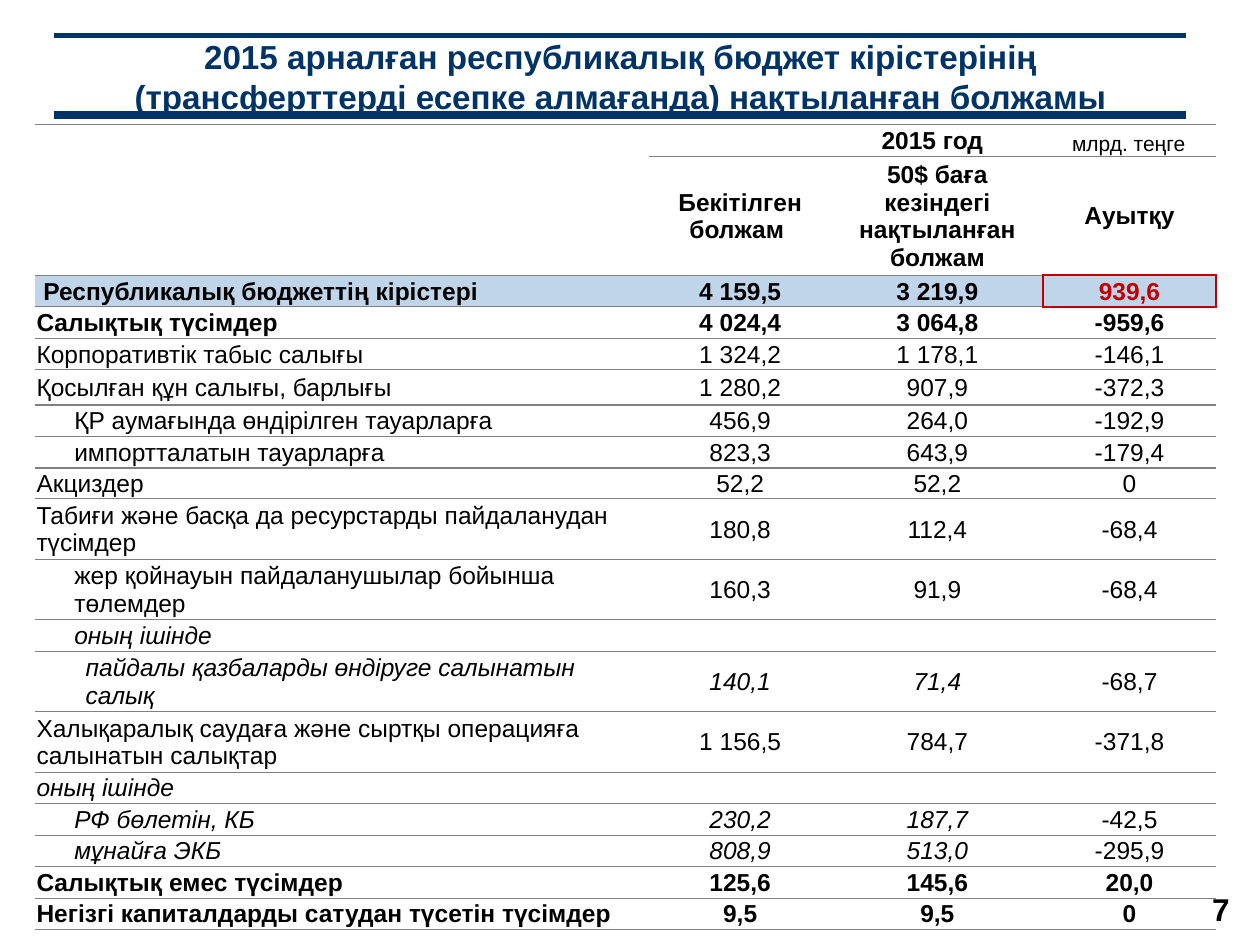
import pptx
import pptx.dml.color
import pptx.enum.shapes
import pptx.enum.text
import pptx.oxml.ns
import pptx.util
from lxml import etree

Inches = pptx.util.Inches
Pt = pptx.util.Pt
Align = pptx.enum.text.PP_ALIGN
Anchor = pptx.enum.text.MSO_ANCHOR
qn = pptx.oxml.ns.qn

NAVY, BLACK, WHITE = "003366", "000000", "FFFFFF"
BAND, RED, GREY = "C0D5EA", "C00000", "808080"
THIN, STRONG = (GREY, 0.75), (RED, 1.5)
NO_GRID = "{2D5ABB26-0587-4C30-8999-92F81FD0307C}"

COLUMNS = [4.87, 1.45, 1.68, 1.37]
SINGLE, DOUBLE = 0.25, 0.48
HEADER_HEIGHTS = [SINGLE, 0.94]
HEADERS = ["Бекітілген болжам ", "50$ баға кезіндегі нақтыланған болжам", "Ауытқу"]
ROWS = [
    (" Республикалық бюджеттің кірістері", "4 159,5", "3 219,9", "939,6", "bold", 0, SINGLE),
    ("Салықтық түсімдер", "4 024,4", "3 064,8", "-959,6", "bold", 0, SINGLE),
    ("Корпоративтік табыс салығы", "1 324,2", "1 178,1", "-146,1", "plain", 0, SINGLE),
    ("Қосылған құн салығы, барлығы", "1 280,2", "907,9", "-372,3", "plain", 0, 0.28),
    ("ҚР аумағында өндірілген тауарларға", "456,9", "264,0", "-192,9", "plain", 0.3, SINGLE),
    ("импортталатын тауарларға", "823,3", "643,9", "-179,4", "plain", 0.3, SINGLE),
    ("Акциздер", "52,2", "52,2", "0", "plain", 0, 0.24),
    ("Табиғи және басқа да ресурстарды пайдаланудан түсімдер",
     "180,8", "112,4", "-68,4", "plain", 0, DOUBLE),
    ("жер қойнауын пайдаланушылар бойынша төлемдер",
     "160,3", "91,9", "-68,4", "plain", 0.3, DOUBLE),
    ("оның ішінде", "", "", "", "italic", 0.3, SINGLE),
    ("пайдалы қазбаларды өндіруге салынатын салық",
     "140,1", "71,4", "-68,7", "italic", 0.39, DOUBLE),
    ("Халықаралық саудаға және сыртқы операцияға салынатын салықтар",
     "1 156,5", "784,7", "-371,8", "plain", 0, DOUBLE),
    ("оның ішінде", "", "", "", "italic", 0, SINGLE),
    ("РФ бөлетін, КБ", "230,2", "187,7", "-42,5", "italic", 0.3, SINGLE),
    ("мұнайға ЭКБ", "808,9", "513,0", "-295,9", "italic", 0.3, SINGLE),
    ("Салықтық емес түсімдер", "125,6", "145,6", "20,0", "bold", 0, SINGLE),
    ("Негізгі капиталдарды сатудан түсетін түсімдер", "9,5", "9,5", "0", "bold", 0, SINGLE),
]


def rgb(color):
    return pptx.dml.color.RGBColor.from_string(color)


class SlideBuilder:
    font = "Arial"
    table_size = 14

    def __init__(self, slide):
        self.slide = slide

    def span(self, para, text, size, color=BLACK, bold=False, italic=False, align=Align.LEFT):
        para.alignment = align
        span = para.add_run()
        span.text = text
        span.font.name = self.font
        span.font.size = Pt(size)
        span.font.bold = bold
        span.font.italic = italic
        span.font.color.rgb = rgb(color)

    def title(self, text, left, top, width, height):
        box = self.slide.shapes.title
        box.left, box.top = Inches(left), Inches(top)
        box.width, box.height = Inches(width), Inches(height)
        frame = box.text_frame
        frame.auto_size = pptx.enum.text.MSO_AUTO_SIZE.NONE
        frame.word_wrap = True
        frame.vertical_anchor = Anchor.MIDDLE
        self.span(frame.paragraphs[0], text, 19, NAVY, bold=True, align=Align.CENTER)

    def rule(self, left, right, y, weight):
        line = self.slide.shapes.add_connector(
            pptx.enum.shapes.MSO_CONNECTOR.STRAIGHT,
            Inches(right), Inches(y), Inches(left), Inches(y))
        line.line.color.rgb = rgb(NAVY)
        line.line.width = Pt(weight)
        etree.SubElement(line._element.spPr, qn("a:effectLst"))

    def page_number(self, text, left, top, width, height):
        box = self.slide.shapes.add_shape(
            pptx.enum.shapes.MSO_SHAPE.RECTANGLE,
            Inches(left), Inches(top), Inches(width), Inches(height))
        box.shadow.inherit = False
        box.fill.solid()
        box.fill.fore_color.rgb = rgb(WHITE)
        box.line.fill.background()
        box.text_frame.vertical_anchor = Anchor.MIDDLE
        self.span(box.text_frame.paragraphs[0], text, 18, bold=True, align=Align.CENTER)

    def label(self, text, left, top, width, height):
        box = self.slide.shapes.add_textbox(
            Inches(left), Inches(top), Inches(width), Inches(height))
        box.text_frame.word_wrap = False
        box.text_frame.auto_size = pptx.enum.text.MSO_AUTO_SIZE.SHAPE_TO_FIT_TEXT
        self.span(box.text_frame.paragraphs[0], text, 12)

    def table(self, left, top, columns, heights):
        frame = self.slide.shapes.add_table(
            len(heights), len(columns), Inches(left), Inches(top),
            Inches(sum(columns)), Inches(sum(heights)))
        table = frame.table
        table.first_row = table.horz_banding = False
        table._tbl.tblPr.find(qn("a:tableStyleId")).text = NO_GRID
        for column, width in zip(table.columns, columns):
            column.width = Inches(width)
        for row, height in zip(table.rows, heights):
            row.height = Inches(height)
        return table

    def cell(self, cell, text, align=Align.CENTER, indent=0, **style):
        cell.vertical_anchor = Anchor.MIDDLE
        cell.margin_left = cell.margin_right = cell.margin_top = Inches(0.01)
        cell.margin_bottom = 0
        para = cell.text_frame.paragraphs[0]
        if text:
            self.span(para, text, self.table_size, align=align, **style)
            if indent:
                properties = para._p.get_or_add_pPr()
                properties.set("marL", str(Inches(indent)))
                properties.set("indent", "0")
        else:
            etree.SubElement(para._p, qn("a:endParaRPr"), sz=str(self.table_size * 100))

    def finish_cell(self, cell, borders, fill=None):
        properties = cell._tc.get_or_add_tcPr()
        for side in "LRTB":
            border = etree.SubElement(properties, qn("a:ln" + side))
            if side in borders:
                color, weight = borders[side]
                border.set("w", str(Pt(weight)))
                solid = etree.SubElement(border, qn("a:solidFill"))
                etree.SubElement(solid, qn("a:srgbClr"), val=color)
            else:
                etree.SubElement(border, qn("a:noFill"))
        if fill:
            cell.fill.solid()
            cell.fill.fore_color.rgb = rgb(fill)
        else:
            cell.fill.background()


def fill_table(builder, table):
    special = {
        (0, 0): {"T": THIN},
        (1, 0): {"B": THIN},
        (1, 3): {"T": THIN, "B": STRONG},
        (2, 2): {"T": THIN, "R": STRONG, "B": THIN},
        (2, 3): dict.fromkeys("LRTB", STRONG),
        (3, 3): {"T": STRONG, "B": THIN},
    }
    table.cell(0, 0).merge(table.cell(1, 0))
    table.cell(0, 1).merge(table.cell(0, 3))
    for position in ((0, 0), (0, 2), (0, 3), (1, 0)):
        builder.cell(table.cell(*position), "")
    builder.cell(table.cell(0, 1), "2015 год", bold=True)
    for column, text in enumerate(HEADERS, 1):
        builder.cell(table.cell(1, column), text, bold=True)
    for row, (*texts, style, indent, _) in enumerate(ROWS, 2):
        for column, text in enumerate(texts):
            builder.cell(
                table.cell(row, column), text,
                align=Align.CENTER if column else Align.LEFT,
                indent=0 if column else indent,
                bold=style == "bold",
                italic=style == "italic" and column < 3,
                color=RED if (row, column) == (2, 3) else BLACK)
    for row in range(len(table.rows)):
        for column in range(len(COLUMNS)):
            borders = special.get((row, column), {"T": THIN, "B": THIN})
            builder.finish_cell(table.cell(row, column), borders, BAND if row == 2 else None)


def main():
    deck = pptx.Presentation()
    deck.slide_width, deck.slide_height = Inches(10), Inches(7.5)
    builder = SlideBuilder(deck.slides.add_slide(deck.slide_layouts[5]))
    builder.title(
        "2015 арналған республикалық бюджет кірістерінің "
        "(трансферттерді есепке алмағанда) нақтыланған болжамы", 0.42, 0.3, 9.01, 0.61)
    for y, weight in ((0.91, 4.5), (0.28, 3)):
        builder.rule(0.43, 9.41, y, weight)
    builder.page_number("7", 9.39, 6.94, 0.6, 0.55)
    builder.label("млрд. теңге", 8.41, 0.99, 1.11, 0.3)
    heights = HEADER_HEIGHTS + [row[-1] for row in ROWS]
    fill_table(builder, builder.table(0.28, 0.99, COLUMNS, heights))
    deck.save("out.pptx")


if __name__ == "__main__":
    main()
